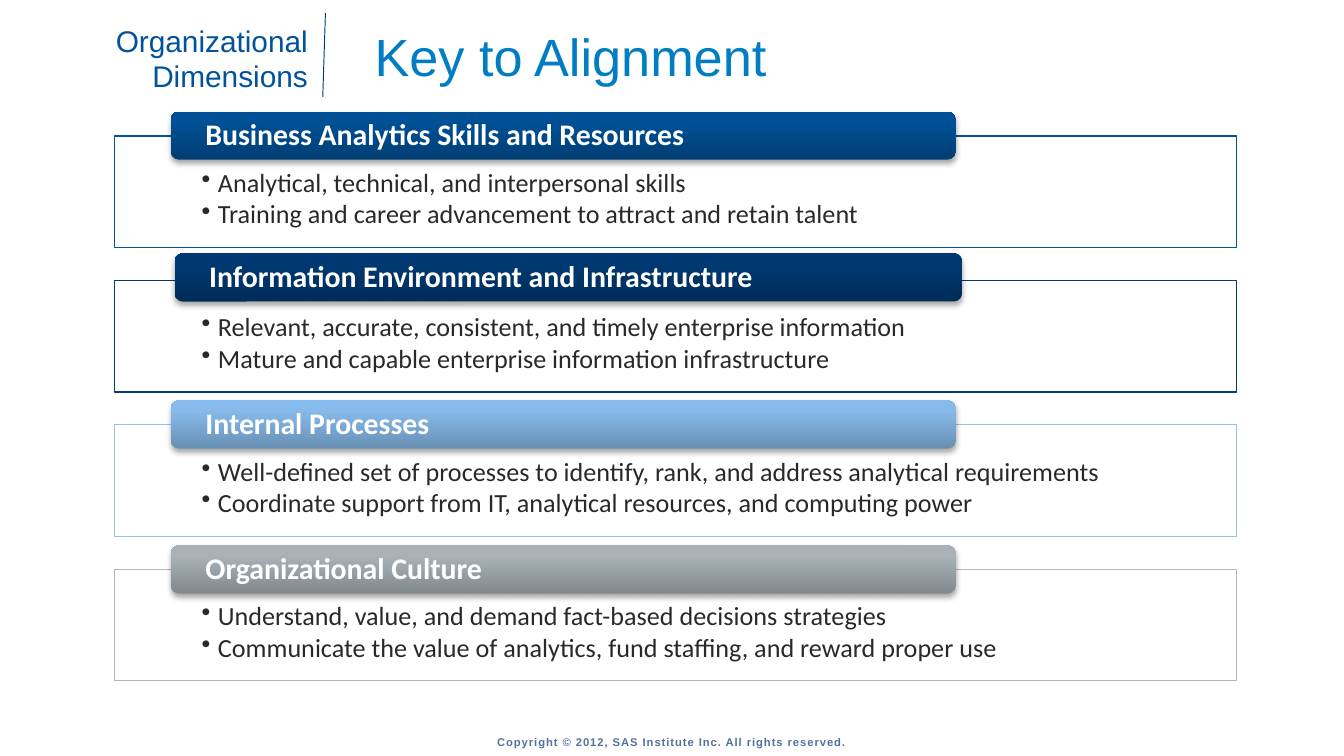
from dataclasses import dataclass

from lxml.etree import SubElement
from pptx import Presentation
from pptx.dml.color import RGBColor
from pptx.enum.shapes import MSO_CONNECTOR, MSO_SHAPE
from pptx.enum.text import MSO_ANCHOR, MSO_AUTO_SIZE, PP_ALIGN
from pptx.oxml import parse_xml
from pptx.oxml.ns import nsdecls, qn
from pptx.util import Cm, Pt

COLORS = {
    "white": "FFFFFF",
    "text": "292929",
    "title": "007DC3",
    "section": "00539B",
    "divider": "003B76",
    "copyright": "52719E",
}
PANEL_TOP, PANEL_PITCH = 2.57, 2.73


@dataclass
class Band:
    heading: str
    bullets: tuple[str, str]
    outline: str
    gradient: tuple[str, str, str]
    header_top: float
    header_left: float = 3.23
    header_width: float = 14.83


BANDS = [
    Band("Business Analytics Skills and Resources",
         ("Analytical, technical, and interpersonal skills",
          "Training and career advancement to attract and retain talent"),
         "00539B", ("003E74", "005096", "005197"), 2.11),
    Band("Information Environment and Infrastructure",
         ("Relevant, accurate, consistent, and timely enterprise information",
          "Mature and capable enterprise information infrastructure"),
         "003B76", ("002C58", "003972", "003973"), 4.79, 3.3, 14.88),
    Band("Internal Processes",
         ("Well-defined set of processes to identify, rank, and address analytical requirements",
          "Coordinate support from IT, analytical resources, and computing power"),
         "97C0E6", ("6890B4", "87BAEA", "86BBED"), 7.57),
    Band("Organizational Culture",
         ("Understand, value, and demand fact-based decisions strategies",
          "Communicate the value of analytics, fund staffing, and reward proper use"),
         "B0B7BB", ("82898D", "A9B2B7", "A9B3B8"), 10.31),
]


def add_span(para, text: str, size: float, color: str, font="Arial", bold=False):
    span = para.add_run()
    span.text = text
    span.font.name = font
    span.font.size = Pt(size)
    span.font.bold = bold
    span.font.color.rgb = RGBColor.from_string(COLORS[color])
    return span


def set_frame(shape, anchor=MSO_ANCHOR.MIDDLE, insets=(0.25, 0.13, 0.25, 0.13)):
    """Wrap and anchor the text; insets are left, top, right, bottom in cm."""
    frame = shape.text_frame
    frame.word_wrap = True
    frame.auto_size = MSO_AUTO_SIZE.NONE
    frame.vertical_anchor = anchor
    (frame.margin_left, frame.margin_top,
     frame.margin_right, frame.margin_bottom) = map(Cm, insets)
    return frame


def add_label(page, left: float, top: float, width: float, height: float, align):
    box = page.shapes.add_textbox(Cm(left), Cm(top), Cm(width), Cm(height))
    para = set_frame(box).paragraphs[0]
    para.alignment = align
    return para


def add_bullet(para) -> None:
    properties = para._p.get_or_add_pPr()
    properties.set("marL", str(Cm(0.31)))
    properties.set("indent", str(-Cm(0.31)))
    SubElement(properties, qn("a:buChar")).set("char", "•")


def add_panel(page, band: Band, top: float) -> None:
    panel = page.shapes.add_shape(
        MSO_SHAPE.RECTANGLE, Cm(2.16), Cm(top), Cm(21.21), Cm(2.11))
    panel.shadow.inherit = False
    panel.fill.solid()
    panel.fill.fore_color.rgb = RGBColor.from_string(COLORS["white"])
    color = panel._element.spPr.find(qn("a:solidFill"))[0]
    SubElement(color, qn("a:alpha")).set("val", "90000")
    panel.line.color.rgb = RGBColor.from_string(band.outline)
    panel.line.width = Pt(0.75)
    frame = set_frame(panel, MSO_ANCHOR.TOP, (1.65, 0.64, 1.65, 0.28))
    for index, bullet in enumerate(band.bullets):
        para = frame.add_paragraph() if index else frame.paragraphs[0]
        para.alignment = PP_ALIGN.LEFT
        para.line_spacing = 0.9
        para.space_after = Pt(1.8)
        add_bullet(para)
        add_span(para, bullet, 14, "text", "Calibri")


def add_header(page, band: Band) -> None:
    header = page.shapes.add_shape(
        MSO_SHAPE.ROUNDED_RECTANGLE, Cm(band.header_left), Cm(band.header_top),
        Cm(band.header_width), Cm(0.91))
    header.line.fill.background()
    stops = "".join(
        f'<a:gs pos="{position}"><a:srgbClr val="{color}"/></a:gs>'
        for position, color in zip((0, 80000, 100000), band.gradient))
    properties = header._element.spPr
    properties.find(qn("a:prstGeom")).addnext(parse_xml(
        f'<a:gradFill {nsdecls("a")} rotWithShape="1"><a:gsLst>{stops}</a:gsLst>'
        '<a:lin ang="16200000" scaled="0"/></a:gradFill>'))
    properties.append(parse_xml(
        f'<a:effectLst {nsdecls("a")}><a:outerShdw blurRad="{Pt(3.1)}" '
        f'dist="{Pt(1.8)}" dir="5400000" rotWithShape="0"><a:srgbClr val="000000">'
        '<a:alpha val="35000"/></a:srgbClr></a:outerShdw></a:effectLst>'))
    para = set_frame(header, insets=(0.61, 0, 0.61, 0)).paragraphs[0]
    para.alignment = PP_ALIGN.LEFT
    para.line_spacing = 0.9
    add_span(para, band.heading, 16, "white", "Calibri", True)


def add_divider(page) -> None:
    divider = page.shapes.add_connector(
        MSO_CONNECTOR.STRAIGHT, Cm(6.15), Cm(0.25), Cm(6.1), Cm(1.83))
    divider.line.color.rgb = RGBColor.from_string(COLORS["divider"])
    divider.line.width = Pt(0.5)
    SubElement(divider._element.spPr, qn("a:effectLst"))


def add_title(page) -> None:
    title = page.shapes.title
    title.left, title.top, title.width, title.height = map(Cm, (6.83, 0.33, 8.79, 1.45))
    para = set_frame(title).paragraphs[0]
    para.alignment = PP_ALIGN.LEFT
    add_span(para, "Key to Alignment", 28, "title")


def main() -> None:
    deck = Presentation()
    deck.slide_width, deck.slide_height = Cm(25.4), Cm(14.29)
    page = deck.slides.add_slide(deck.slide_layouts[5])

    add_title(page)
    add_divider(page)
    section = add_label(page, 1.45, 0.3, 4.62, 1.6, PP_ALIGN.RIGHT)
    section.line_spacing = Pt(18.8)
    add_span(section, "Organizational Dimensions", 16, "section")

    for index, band in enumerate(BANDS):
        add_panel(page, band, PANEL_TOP + index * PANEL_PITCH)
        add_header(page, band)

    notice = add_label(page, 8.33, 13.77, 8.71, 0.5, PP_ALIGN.CENTER)
    span = add_span(notice, "Copyright © 2012, SAS Institute Inc. All rights reserved.",
                    6, "copyright", bold=True)
    span._r.get_or_add_rPr().set("spc", "50")

    deck.save("out.pptx")


if __name__ == "__main__":
    main()
